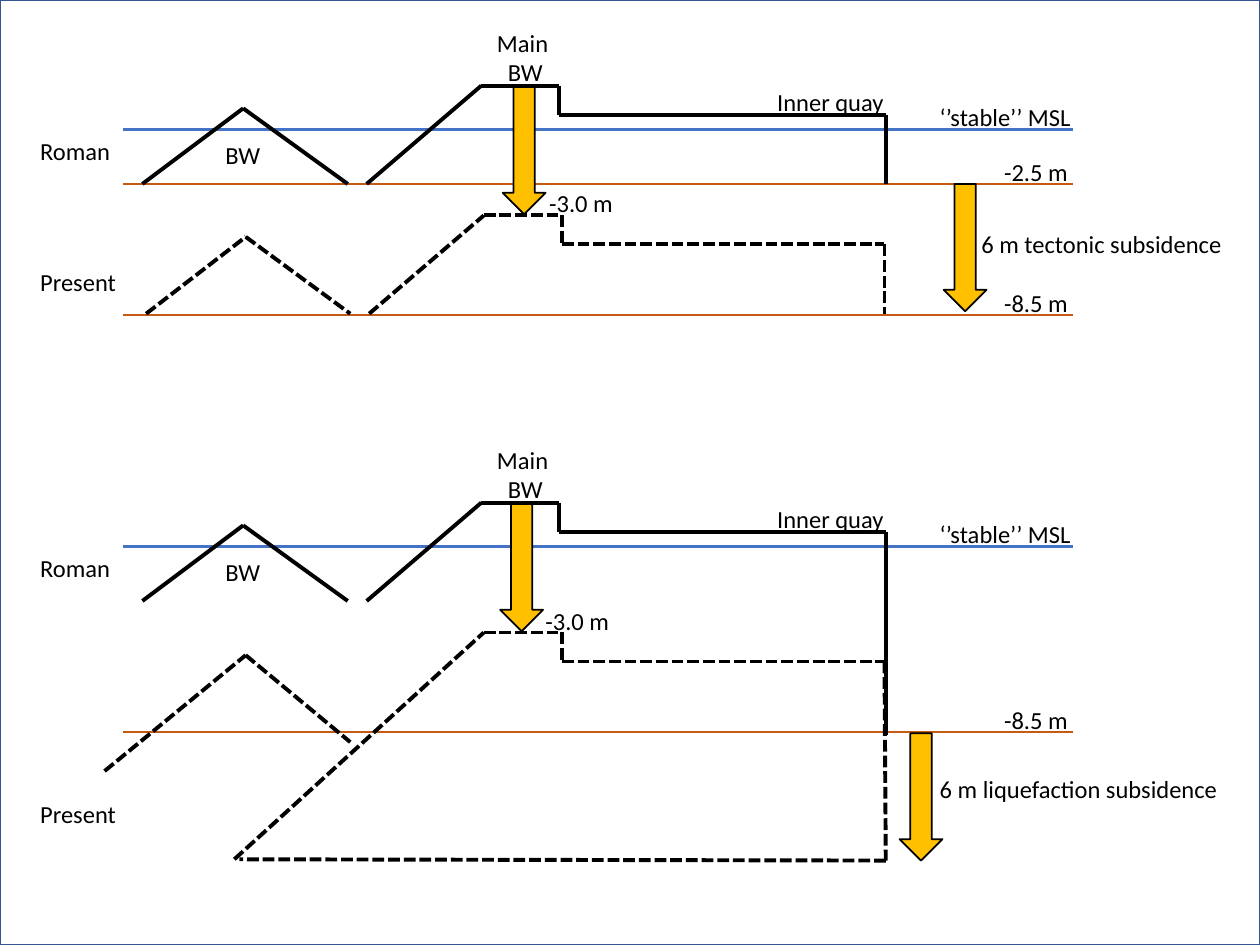
from itertools import pairwise

from lxml.etree import SubElement
from pptx import Presentation
from pptx.dml.color import RGBColor
from pptx.enum.dml import MSO_LINE
from pptx.enum.shapes import MSO_CONNECTOR, MSO_SHAPE
from pptx.enum.text import MSO_AUTO_SIZE, PP_ALIGN
from pptx.oxml.ns import qn
from pptx.util import Inches, Pt

WHITE = RGBColor(0xFF, 0xFF, 0xFF)
BLACK = RGBColor(0, 0, 0)
NAVY = RGBColor(0x32, 0x54, 0x91)
BLUE = RGBColor(0x44, 0x72, 0xC4)
BROWN = RGBColor(0xC5, 0x5A, 0x11)
GOLD = RGBColor(0xFF, 0xC0, 0x00)

prs = Presentation()
prs.slide_width, prs.slide_height = Inches(10), Inches(7.5)
shapes = prs.slides.add_slide(prs.slide_layouts[6]).shapes


def add_text(words, x, y, w, h=0.34, size=14, color=BLACK, align=PP_ALIGN.LEFT):
    box = shapes.add_textbox(Inches(x), Inches(y), Inches(w), Inches(h))
    frame = box.text_frame
    frame.word_wrap = False
    frame.auto_size = MSO_AUTO_SIZE.SHAPE_TO_FIT_TEXT
    frame.text = words
    for par in frame.paragraphs:
        par.alignment = align
        font = par.runs[0].font
        font.name, font.size, font.color.rgb = "Calibri", Pt(size), color


def add_path(points, color=BLACK, width=2.25, dash=None):
    """Join the points with straight connectors."""
    for start, end in pairwise(points):
        line = shapes.add_connector(
            MSO_CONNECTOR.STRAIGHT, *[Inches(n) for n in start + end])
        line.line.color.rgb = color
        line.line.width = Pt(width)
        if dash:
            line.line.dash_style = dash
        SubElement(line._element.spPr, qn("a:effectLst"))


frame = shapes.add_shape(MSO_SHAPE.RECTANGLE, 0, 0, prs.slide_width, prs.slide_height)
frame.shadow.inherit = False
frame.fill.solid()
frame.fill.fore_color.rgb = WHITE
frame.line.color.rgb = NAVY
frame.line.width = Pt(1)

# Each panel: top, brown levels, foot of the quay wall, sunken outlines,
# arrows, and the labels that differ
panels = [
    dict(
        top=0, levels=[("-2.5 m", 1.46), ("-8.5 m", 2.5)], wall=1.46,
        sunk=[
            [(1.16, 2.49), (1.95, 1.88), (2.78, 2.49)],
            [(2.93, 2.49), (3.84, 1.71), (4.46, 1.71), (4.46, 1.94),
             (7.02, 1.94), (7.02, 2.49)],
        ],
        arrows=[(3.99, 0.69), (7.49, 1.46)],
        labels=[("-3.0 m", 4.26, 1.44, 0.71), ("Present", 0.22, 2.07, 0.81),
                ("6 m tectonic subsidence", 7.69, 1.77, 2.13)],
    ),
    dict(
        top=3.31, levels=[("-8.5 m", 5.81)], wall=5.83,
        sunk=[
            [(0.83, 6.12), (1.95, 5.2), (2.78, 5.89)],
            [(1.86, 6.82), (3.84, 5.02), (4.46, 5.02), (4.46, 5.25),
             (7.02, 5.25), (7.03, 6.83), (1.9, 6.82)],
        ],
        arrows=[(3.97, 4), (7.14, 5.82)],
        labels=[("-3.0 m", 4.23, 4.76, 0.71), ("Present", 0.22, 6.29, 0.81),
                ("6 m liquefaction subsidence", 7.36, 6.09, 2.43)],
    ),
]

for panel in panels:
    top = panel["top"]
    sea = top + 1.03
    add_path([(0.98, sea), (8.52, sea)], BLUE, 1.5)
    for name, y in panel["levels"]:
        add_path([(0.98, y), (8.52, y)], BROWN, 1.5)
        add_text(name, 7.87, y - 0.26, 0.71)

    mound = [(1.13, 1.46), (1.93, 0.86), (2.76, 1.46)]
    quay = [(2.91, 1.46), (3.82, 0.68), (4.44, 0.68), (4.44, 0.91), (7.03, 0.91)]
    for outline in (mound, quay):
        add_path([(x, top + y) for x, y in outline])
    add_path([(7.03, top + 0.91), (7.03, panel["wall"])])
    for outline in panel["sunk"]:
        add_path(outline, dash=MSO_LINE.SQUARE_DOT)

    for x, y in panel["arrows"]:
        arrow = shapes.add_shape(
            MSO_SHAPE.DOWN_ARROW, Inches(x), Inches(y), Inches(0.34), Inches(1.01))
        arrow.shadow.inherit = False
        arrow.fill.solid()
        arrow.fill.fore_color.rgb = GOLD
        arrow.line.color.rgb = BLACK
        arrow.line.width = Pt(1)

    add_text("‘’stable’’ MSL", 7.36, top + 0.76, 1.25)
    add_text("BW", 1.69, top + 1.06, 0.48)
    add_text("Inner quay", 6.07, top + 0.64, 1.06)
    add_text("Main \nBW", 3.84, top + 0.17, 0.66, 0.57, align=PP_ALIGN.CENTER)
    add_text("Roman", 0.22, top + 1.03, 0.76)
    for label in panel["labels"]:
        add_text(*label)

prs.save("out.pptx")
